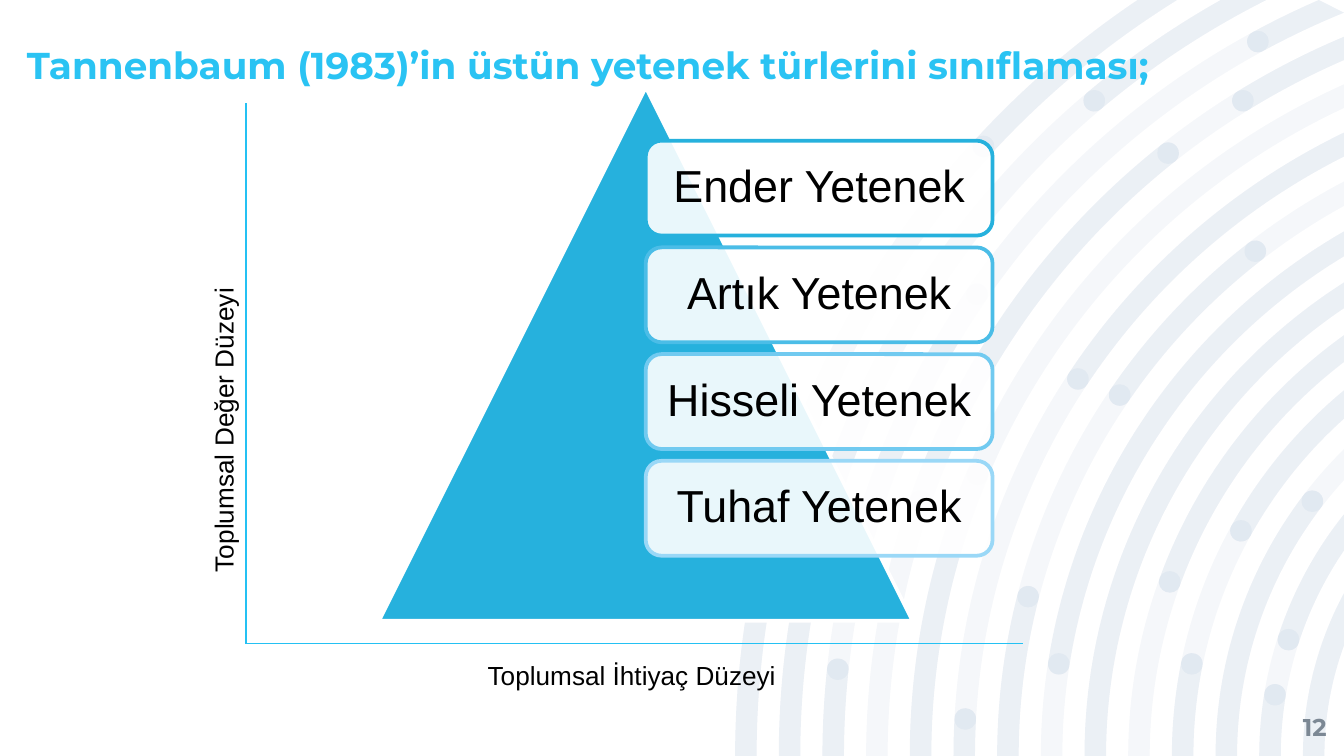
from math import acos, asin, cos, pi, sin, tan

from lxml.etree import SubElement
from pptx import Presentation
from pptx.dml.color import RGBColor
from pptx.enum.shapes import MSO_CONNECTOR as Connector, MSO_SHAPE as Shape
from pptx.enum.text import MSO_ANCHOR as Anchor, PP_ALIGN as Align
from pptx.oxml.ns import qn
from pptx.util import Inches, Pt

W, H = 10, 5.625
SKY, BLUE, NAVY, WHITE, BLACK, GREY = "2AC3F3", "26B1DD", "004591", "FFFFFF", "000000", "7C8894"
AXIS_BLUE = "24C1F3"
TALENTS = [("Ender Yetenek", BLUE), ("Artık Yetenek", "4BBDE7"),
           ("Hisseli Yetenek", "71CAF0"), ("Tuhaf Yetenek", "9AD8F7")]

# Rings: common centre, outermost radius, spacing and band width
CENTRE, OUTER, RING_STEP, BAND = (12.25, H), 6.78, 0.325, 0.16
# Darker arcs of each ring as (lower y, upper y); None runs off the slide
ARCS = [
    [(H, 3.5), (1.09, None)],
    [(H, 3.04), (0.75, None)],
    [(H, 4.98), (4.05, 2.19), (0.31, None)],
    [(3.73, 1.14), (0.75, None)],
    [(H, 3.53)],
    [(H, 5.35), (2.82, None)],
    [(H, 4.44), (2.94, 1.87)],
    [(4.94, None)],
    [(H, None)],
    [(4.33, None)],
    [(H, 4.94), (3.95, None)],
    [(H, 3.73)],
    [(H, 5.17), (4.76, None)],
    [(H, None)],
]


def color(hex_text):
    return RGBColor.from_string(hex_text)


def paint(shape, fill, line=None, alpha=None):
    shape.shadow.inherit = False
    shape.fill.solid()
    shape.fill.fore_color.rgb = color(fill)
    if alpha is not None:
        tint = shape.fill._xPr.find(qn("a:solidFill"))[0]
        SubElement(tint, qn("a:alpha"), val=str(alpha * 1000))
    if line:
        shape.line.color.rgb = color(line)
        shape.line.width = Pt(2)
    else:
        shape.line.fill.background()


def write(shape, text, size, hue, font="Arial", bold=False, align=Align.LEFT,
          anchor=Anchor.TOP, inset=None, spacing=None, wrap=True):
    frame = shape.text_frame
    frame.word_wrap = wrap
    frame.vertical_anchor = anchor
    if inset is not None:
        frame.margin_left = frame.margin_right = Inches(inset)
        frame.margin_top = frame.margin_bottom = Inches(inset)
    paragraph = frame.paragraphs[0]
    paragraph.alignment = align
    if spacing:
        paragraph.line_spacing = spacing
    run = paragraph.add_run()
    run.text = text
    run.font.size, run.font.name, run.font.bold = Pt(size), font, bold
    run.font.color.rgb = color(hue)


def text_box(slide, box, *args, **kwargs):
    shape = slide.shapes.add_textbox(*map(Inches, box))
    write(shape, *args, **kwargs)
    return shape


# Ring geometry: angles grow clockwise from the left-pointing axis
def polar(centre, radius, angle):
    return centre[0] - radius * cos(angle), centre[1] - radius * sin(angle)


def curve(centre, radius, start, end):
    """A straight move to the arc's start, then the arc as one Bezier curve."""
    pull = radius * 4 / 3 * tan((end - start) / 4)
    (x1, y1), (x2, y2) = polar(centre, radius, start), polar(centre, radius, end)
    return [[(x1, y1)], [(x1 + pull * sin(start), y1 - pull * cos(start)),
                         (x2 - pull * sin(end), y2 + pull * cos(end)), (x2, y2)]]


def exit_angle(radius):
    return min(acos((CENTRE[0] - W) / radius), asin(min(1, CENTRE[1] / radius)))


def band(middle, low, high):
    """Outline of one arc, rounded where it ends inside the slide, and its end dots."""
    outer, inner = middle + BAND / 2, middle - BAND / 2
    start = asin((H - low) / middle)
    ends = [exit_angle(r) if high is None else asin((H - high) / middle)
            for r in (outer, inner)]
    outline, tips = curve(CENTRE, outer, start, ends[0]), []
    if high is not None:
        tips.append(polar(CENTRE, middle, ends[0]))
        outline += curve(tips[-1], BAND / 2, ends[0], ends[0] + pi)[1:]
    outline += curve(CENTRE, inner, ends[1], start)
    if low < H:
        tips.append(polar(CENTRE, middle, start))
        outline += curve(tips[-1], BAND / 2, start + pi, start + 2 * pi)[1:]
    dots = [curve(tip, BAND / 2, 0, pi) + curve(tip, BAND / 2, pi, 2 * pi)[1:]
            for tip in tips]
    return outline, dots


def add_outlines(slide, outlines):
    left = CENTRE[0] - OUTER
    builder = slide.shapes.build_freeform(Inches(left), 0)
    builder.add_line_segments([(Inches(W), Inches(H))], close=True)
    shape = builder.convert_to_shape()
    drawing = shape._element.find(".//" + qn("a:path"))
    for child in list(drawing):
        drawing.remove(child)
    for outline in outlines:
        for index, points in enumerate(outline):
            tag = "a:cubicBezTo" if len(points) == 3 else "a:lnTo" if index else "a:moveTo"
            segment = SubElement(drawing, qn(tag))
            for x, y in points:
                SubElement(segment, qn("a:pt"), x=str(int(Inches(x - left))),
                           y=str(int(Inches(y))))
        SubElement(drawing, qn("a:close"))
    paint(shape, NAVY, alpha=4)


def add_rings(slide):
    rings, arcs, dots = [], [], []
    for index, spans in enumerate(ARCS):
        middle = OUTER - RING_STEP * index - BAND / 2
        rings.append(band(middle, H, None)[0])
        for low, high in spans:
            outline, ends = band(middle, low, high)
            arcs.append(outline)
            dots += ends
    for layer in (rings, arcs, dots):
        add_outlines(slide, layer)


def add_title(slide, box):
    title = slide.shapes.title
    title.left, title.top, title.width, title.height = map(Inches, box)
    write(title, "Tannenbaum (1983)’in üstün yetenek türlerini sınıflaması;", 20, SKY,
          "Montserrat", True, anchor=Anchor.BOTTOM, inset=0, spacing=0.9)
    slide.shapes._spTree.append(title._element)  # in front of the rings


def add_pyramid(slide, box):
    left, top, width, height = box
    pyramid = slide.shapes.add_shape(Shape.ISOSCELES_TRIANGLE, *map(Inches, box))
    paint(pyramid, BLUE, WHITE)
    step = height / 5
    for row, (talent, edge) in enumerate(TALENTS):
        place = (left + width / 2, top + height / 10 + row * step, width * 0.65, step * 8 / 9)
        card = slide.shapes.add_shape(Shape.ROUNDED_RECTANGLE, *map(Inches, place))
        paint(card, WHITE, edge, alpha=90)
        write(card, talent, 24, BLACK, align=Align.CENTER, anchor=Anchor.MIDDLE,
              inset=0.1, spacing=0.9)


def add_axes(slide, box):
    left, top, width, height = box
    bottom = top + height
    value_label = text_box(slide, (left - 1.74, top + 1.84, 3.15, 0.34),
                           "Toplumsal Değer Düzeyi", 14, BLACK)
    value_label.rotation = 270
    text_box(slide, (left + 1.7, bottom + 0.07, 2.38, 0.34),
             "Toplumsal İhtiyaç Düzeyi", 14, BLACK, wrap=False)
    for start, end in (((left, top), (left, bottom)),
                       ((left, bottom), (left + width, bottom))):
        axis = slide.shapes.add_connector(Connector.STRAIGHT, *map(Inches, start + end))
        axis.line.color.rgb = color(AXIS_BLUE)
        axis.line.width = Pt(0.75)
        SubElement(axis._element.spPr, qn("a:effectLst"))


def main():
    deck = Presentation()
    deck.slide_width, deck.slide_height = Inches(W), Inches(H)
    slide = deck.slides.add_slide(deck.slide_layouts[5])
    add_rings(slide)
    add_title(slide, (0.2, 0.22, 9.8, 0.43))
    text_box(slide, (9.27, 5.19, 0.6, 0.43), "12", 13, GREY, "Montserrat", True,
             align=Align.RIGHT, anchor=Anchor.MIDDLE, inset=0)
    add_pyramid(slide, (2.82, 0.65, 3.97, 3.97))
    add_axes(slide, (1.83, 0.77, 5.78, 4.02))
    deck.save("out.pptx")


if __name__ == "__main__":
    main()
